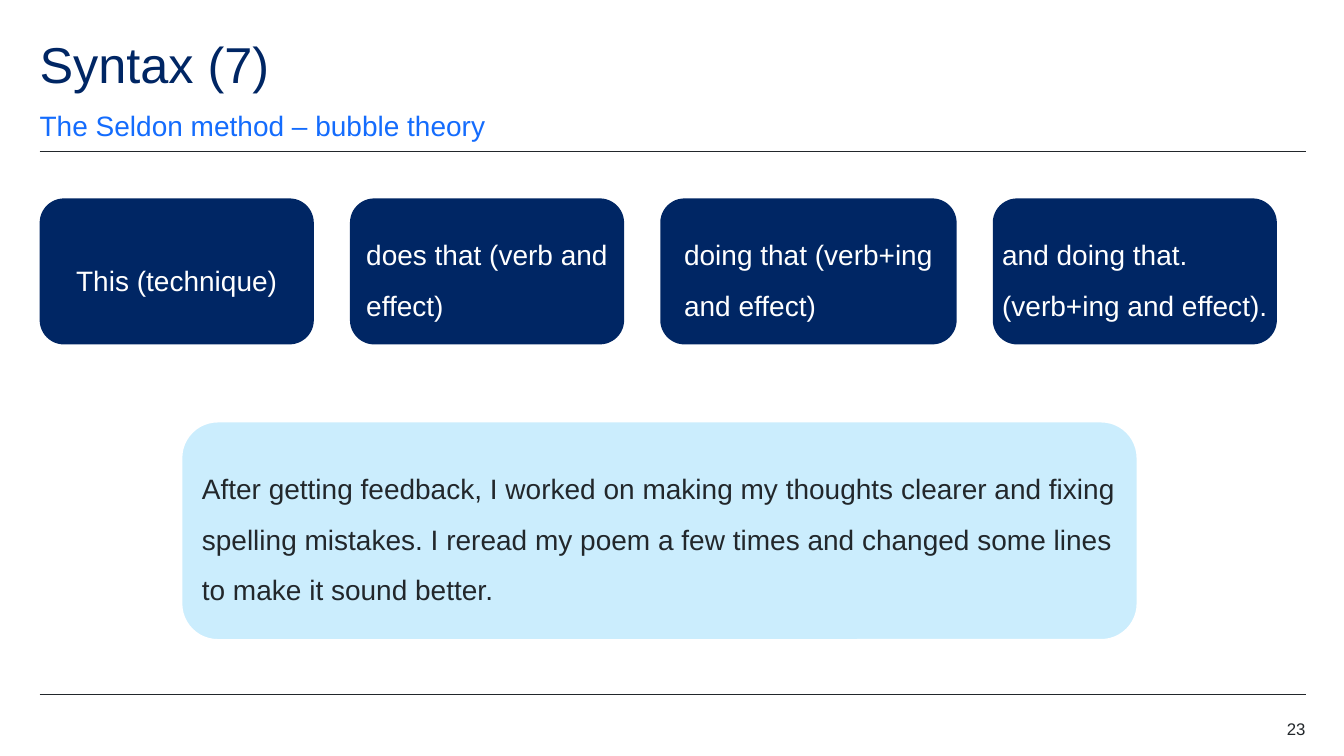
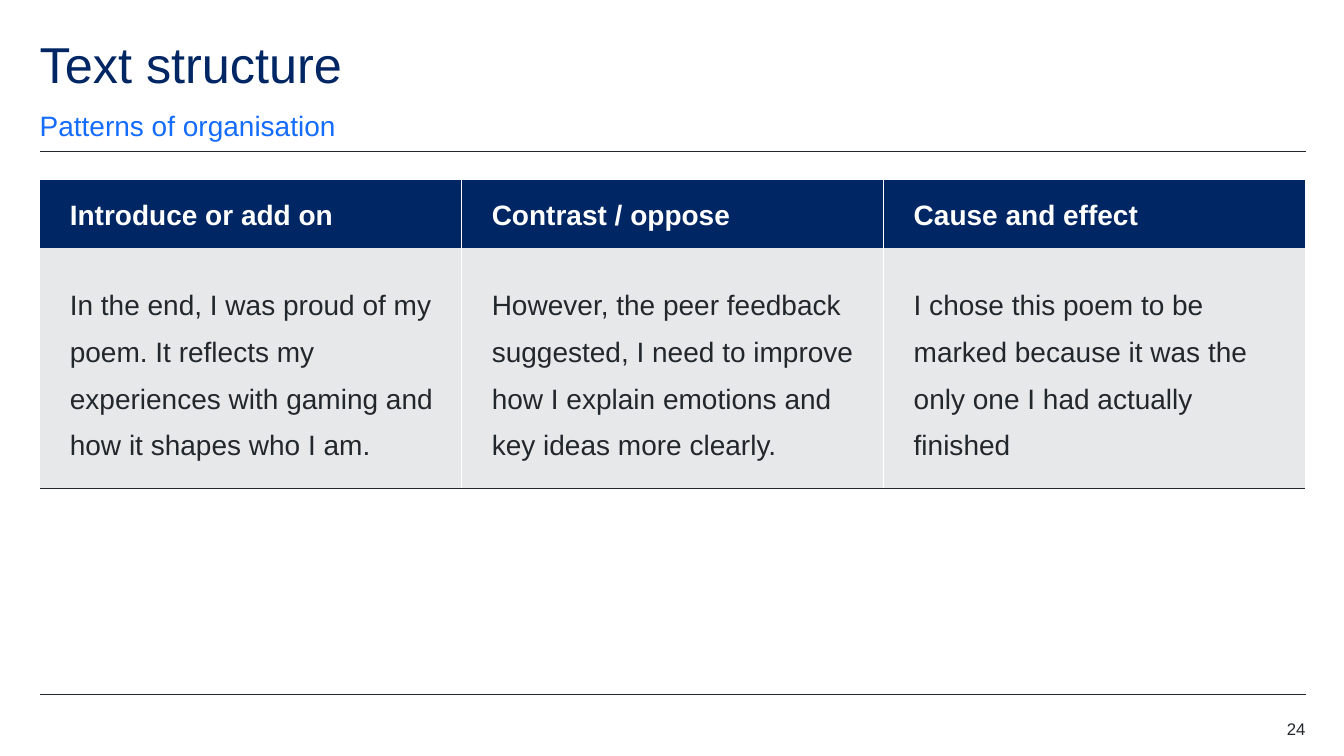
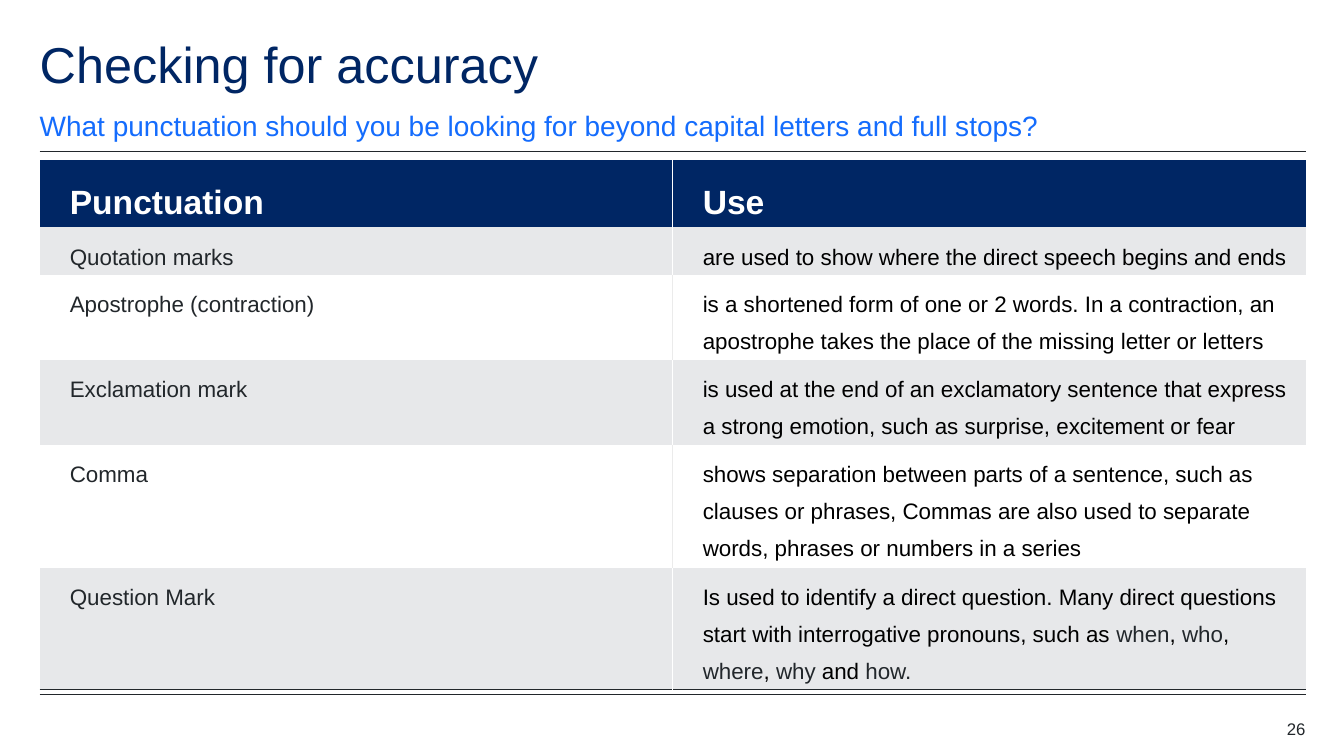
import pptx
import pptx.util
import pptx.dml.color
import pptx.enum.shapes
import pptx.enum.text
import pptx.oxml
import pptx.oxml.ns

Cm, Pt = pptx.util.Cm, pptx.util.Pt
ALIGN = pptx.enum.text.PP_ALIGN
ANCHOR = pptx.enum.text.MSO_ANCHOR
SHAPE = pptx.enum.shapes.MSO_SHAPE

COLOURS = {
    "navy": "002664", "blue": "146CFD", "sky": "CBEDFD", "ink": "22272B",
    "grey": "E7E8EA", "divider": "EBEBEB", "white": "FFFFFF", "black": "000000",
}
FONT = "Arial"
LEFT, WIDTH = 1, 31.9
RULE_TOPS = (3.81, 17.5)

BODY = {"line_spacing": 1.5, "space_after": Pt(12), "alignment": ALIGN.LEFT}
TITLE = {"line_spacing": 0.9, "space_after": Pt(0), "alignment": ALIGN.LEFT}
NUMBER = {"alignment": ALIGN.RIGHT}

# Words between asterisks are set in the ink colour.
SYNTAX = {
    "title": "Syntax (7)",
    "subtitle": "The Seldon method – bubble theory",
    "number": 23,
    # text, width, inset
    "bubbles": [
        ("This (technique)", 6.91, 0.25),
        ("does that (verb and effect)", 6.91, 0),
        ("doing that (verb+ing and effect)", 7.47, 0),
        ("and doing that. (verb+ing and effect).", 7.16, 0),
    ],
    "example": "After getting feedback, I worked on making my thoughts clearer and fixing "
               "spelling mistakes. I reread my poem a few times and changed some lines "
               "to make it sound better.",
}
STRUCTURE = {
    "title": "Text structure",
    "subtitle": "Patterns of organisation",
    "number": 24,
    "top": 4.53,
    "heights": [1.72, 6.05],
    "sizes": (20, 20),
    "colours": ("ink", "ink", "ink"),
    "anchor": ANCHOR.MIDDLE,
    "rows": [
        ("Introduce or add on", "Contrast / oppose", "Cause and effect"),
        ("In the end, I was proud of my poem. It reflects my experiences with gaming "
         "and how it shapes who I am.",
         "However, the peer feedback suggested, I need to improve how I explain "
         "emotions and key ideas more clearly.",
         "I chose this poem to be marked because it was the only one I had actually "
         "finished"),
    ],
}
ACCURACY = {
    "title": "Checking for accuracy",
    "subtitle": "What punctuation should you be looking for beyond capital letters and full stops?",
    "number": 26,
    "top": 4.04,
    "heights": [1.69, 1.19, 2.14, 2.14, 3.1, 3.05],
    "sizes": (24, 16),
    "colours": ("ink", "black"),
    "anchor": ANCHOR.TOP,
    "rows": [
        ("Punctuation", "Use"),
        ("Quotation marks", "are used to show where the direct speech begins and ends"),
        ("Apostrophe (contraction)",
         "is a shortened form of one or 2 words. In a contraction, an apostrophe takes "
         "the place of the missing letter or letters"),
        ("Exclamation mark",
         "is used at the end of an exclamatory sentence that express a strong emotion, "
         "such as surprise, excitement or fear"),
        ("Comma",
         "shows separation between parts of a sentence, such as clauses or phrases, "
         "Commas are also used to separate words, phrases or numbers in a series"),
        ("Question Mark",
         "Is used to identify a direct question. Many direct questions start with "
         "interrogative pronouns, such as *when*, *who*, *where*, *why* and *how.*"),
    ],
}


def rgb(name):
    return pptx.dml.color.RGBColor.from_string(COLOURS[name])


def apply(target, values):
    for name, value in values.items():
        setattr(target, name, value)


def write(tf, text, size, colour, style, bold=False):
    p = tf.paragraphs[0]
    apply(p, style)
    for i, part in enumerate(text.split("*")):
        if part:
            r = p.add_run()
            r.text = part
            apply(r.font, {"name": FONT, "size": Pt(size), "bold": bold})
            r.font.color.rgb = rgb("ink" if i % 2 else colour)


def set_frame(tf, inset=0, anchor=ANCHOR.TOP):
    apply(tf, {"word_wrap": True, "auto_size": pptx.enum.text.MSO_AUTO_SIZE.NONE,
               "vertical_anchor": anchor})
    apply(tf, {f"margin_{side}": Cm(inset) for side in ("left", "right")})
    apply(tf, {f"margin_{side}": Cm(inset / 2) for side in ("top", "bottom")})


def add_text(s, box, text, size, colour, style, anchor=ANCHOR.TOP):
    tf = s.shapes.add_textbox(*map(Cm, box)).text_frame
    set_frame(tf, anchor=anchor)
    write(tf, text, size, colour, style)


def add_rule(s, top):
    line = s.shapes.add_connector(pptx.enum.shapes.MSO_CONNECTOR.STRAIGHT,
                                  Cm(LEFT), Cm(top), Cm(LEFT + WIDTH), Cm(top))
    line.line.color.rgb = rgb("ink")
    line.line.width = Pt(0.5)
    pptx.oxml.ns.qn("a:effectLst")
    line._element.spPr.append(pptx.oxml.parse_xml(
        f"<a:effectLst {pptx.oxml.ns.nsdecls('a')}/>"))


def add_slide(prs, content):
    """Add a slide with the shared title, subtitle, rules and page number."""
    s = prs.slides.add_slide(prs.slide_layouts[5])
    title = s.shapes.title
    apply(title, {"left": Cm(LEFT), "top": Cm(1), "width": Cm(28), "height": Cm(1.52)})
    set_frame(title.text_frame)
    write(title.text_frame, content["title"], 36, "navy", TITLE)
    add_text(s, (LEFT, 2.72, 28, 0.86), content["subtitle"], 20, "blue", BODY, ANCHOR.BOTTOM)
    for top in RULE_TOPS:
        add_rule(s, top)
    add_text(s, (LEFT + WIDTH - 2, 18.11, 2, 0.51), str(content["number"]), 12, "ink", NUMBER)
    return s


def add_bubble(s, box, text, fill, colour, inset):
    sp = s.shapes.add_shape(SHAPE.ROUNDED_RECTANGLE, *map(Cm, box))
    sp.shadow.inherit = False
    sp.fill.solid()
    sp.fill.fore_color.rgb = rgb(fill)
    sp.line.fill.background()
    set_frame(sp.text_frame, inset, ANCHOR.MIDDLE)
    write(sp.text_frame, text, 20, colour, BODY)
    return sp


def set_borders(cell, edges):
    """Draw the given edges (L, R, T, B) of a cell and clear the others."""
    tcPr = cell._tc.get_or_add_tcPr()
    for edge in "LRTB":
        paint = "<a:noFill/>"
        if edge in edges:
            paint = f'<a:solidFill><a:srgbClr val="{COLOURS[edges[edge]]}"/></a:solidFill>'
        tcPr.append(pptx.oxml.parse_xml(
            f'<a:ln{edge} {pptx.oxml.ns.nsdecls("a")} w="12700">{paint}</a:ln{edge}>'))


def add_grid(s, content):
    rows, heights = content["rows"], content["heights"]
    n_rows, n_cols = len(rows), len(rows[0])
    table = s.shapes.add_table(n_rows, n_cols, Cm(LEFT), Cm(content["top"]),
                               Cm(WIDTH), Cm(sum(heights))).table
    for column in table.columns:
        column.width = Cm(WIDTH / n_cols)
    for i, (row, height) in enumerate(zip(rows, heights)):
        table.rows[i].height = Cm(height)
        header = i == 0
        fill = "navy" if header else "grey" if i % 2 else "white"
        divider = "divider" if fill == "white" else "white"
        for j, text in enumerate(row):
            cell = table.cell(i, j)
            edges = {}
            if j > 0:
                edges["L"] = divider
            if j < n_cols - 1:
                edges["R"] = divider
            if i == n_rows - 1:
                edges["B"] = "ink"
            set_borders(cell, edges)
            cell.fill.solid()
            cell.fill.fore_color.rgb = rgb(fill)
            apply(cell, {"margin_left": Cm(0.76),
                         "vertical_anchor": ANCHOR.TOP if header else content["anchor"]})
            write(cell.text_frame, text, content["sizes"][0 if header else 1],
                  "white" if header else content["colours"][j], BODY, header)


def add_syntax(prs):
    s = add_slide(prs, SYNTAX)
    left, gap = LEFT, 0.91
    for text, width, inset in SYNTAX["bubbles"]:
        sp = add_bubble(s, (left, 5, width, 3.68), text, "navy", "white", inset)
        sp.text_frame._txBody.bodyPr.set("anchorCtr", "1")
        left += width + gap
    example = add_bubble(s, (4.57, 10.62, 24.1, 5.51), SYNTAX["example"], "sky", "ink", 0.25)
    example.line.color.rgb = rgb("white")
    example.line.width = Pt(1.5)


def main():
    prs = pptx.Presentation()
    prs.slide_width, prs.slide_height = Cm(33.87), Cm(19.05)
    add_syntax(prs)
    for content in (STRUCTURE, ACCURACY):
        add_grid(add_slide(prs, content), content)
    prs.save("out.pptx")


if __name__ == "__main__":
    main()
